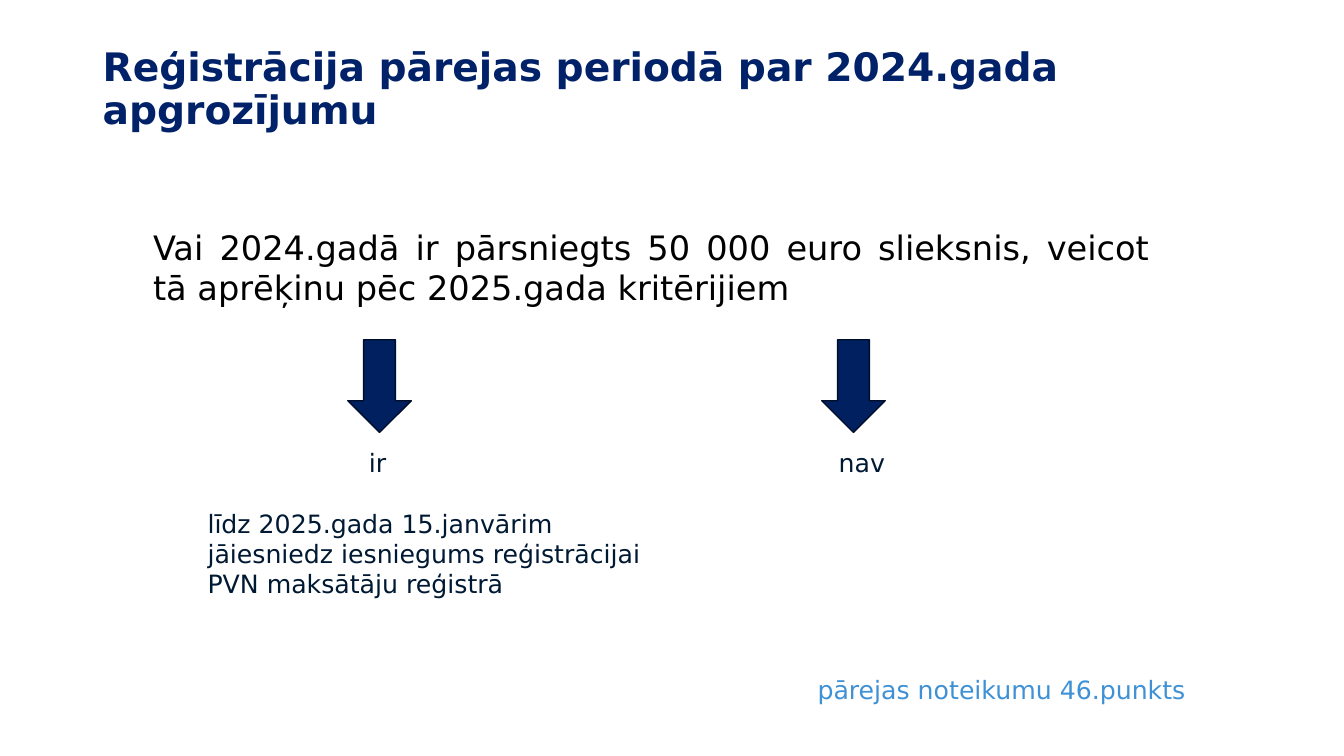
from dataclasses import dataclass

from pptx import Presentation
from pptx.dml.color import RGBColor
from pptx.enum.shapes import MSO_SHAPE
from pptx.enum.text import MSO_ANCHOR, PP_ALIGN
from pptx.util import Inches, Pt


@dataclass(frozen=True)
class Theme:
    font: str = "DejaVu Sans"
    title_color: str = "012269"
    question_color: str = "000000"
    answer_color: str = "001933"
    reference_color: str = "3F91D5"
    arrow_fill: str = "002060"
    arrow_line: str = "000E2A"
    title_size: int = 28
    question_size: int = 24
    answer_size: int = 18


class SlideBuilder:
    def __init__(self, slide, theme):
        self.slide = slide
        self.theme = theme

    def text(self, content, box, size, color, bold=False, anchor=MSO_ANCHOR.TOP, **paragraph_format):
        """Add a wrapped text box; box is left, top, width, height in inches."""
        shape = self.slide.shapes.add_textbox(*map(Inches, box))
        frame = shape.text_frame
        frame.word_wrap = True
        frame.vertical_anchor = anchor
        paragraph = frame.paragraphs[0]
        for name, value in paragraph_format.items():
            setattr(paragraph, name, value)
        run = paragraph.add_run()
        run.text = content
        font_format = {"name": self.theme.font, "size": Pt(size), "bold": bold}
        for name, value in font_format.items():
            setattr(run.font, name, value)
        run.font.color.rgb = RGBColor.from_string(color)

    def down_arrow(self, left, top):
        box = map(Inches, (left, top, 0.63, 0.92))
        shape = self.slide.shapes.add_shape(MSO_SHAPE.DOWN_ARROW, *box)
        shape.shadow.inherit = False
        shape.fill.solid()
        shape.fill.fore_color.rgb = RGBColor.from_string(self.theme.arrow_fill)
        shape.line.color.rgb = RGBColor.from_string(self.theme.arrow_line)
        shape.line.width = Pt(1)


def main():
    presentation = Presentation()
    presentation.slide_width = Inches(13.33)
    presentation.slide_height = Inches(7.5)
    theme = Theme()
    slide = presentation.slides.add_slide(presentation.slide_layouts[6])
    builder = SlideBuilder(slide, theme)

    builder.text(
        "Reģistrācija pārejas periodā par 2024.gada apgrozījumu",
        (0.92, 0.4, 10.58, 0.99), theme.title_size, theme.title_color,
        bold=True, anchor=MSO_ANCHOR.MIDDLE, line_spacing=0.9,
    )
    builder.text(
        "Vai 2024.gadā ir pārsniegts 50 000 euro slieksnis, veicot tā aprēķinu "
        "pēc 2025.gada kritērijiem",
        (1.42, 2.2, 10.08, 0.9), theme.question_size, theme.question_color,
        alignment=PP_ALIGN.JUSTIFY,
    )

    answers = [("ir", 3.45, 3.56, 0.53), ("nav", 8.15, 8.22, 0.72)]
    for answer, arrow_left, label_left, label_width in answers:
        builder.down_arrow(arrow_left, 3.37)
        builder.text(answer, (label_left, 4.39, label_width, 0.4),
                     theme.answer_size, theme.answer_color)

    builder.text(
        "līdz 2025.gada 15.janvārim jāiesniedz iesniegums reģistrācijai "
        "PVN maksātāju reģistrā",
        (1.96, 4.99, 4.88, 1.01), theme.answer_size, theme.answer_color,
    )
    builder.text("pārejas noteikumu 46.punkts", (8.01, 6.64, 4.41, 0.4),
                 theme.answer_size, theme.reference_color)

    presentation.save("out.pptx")


if __name__ == "__main__":
    main()
